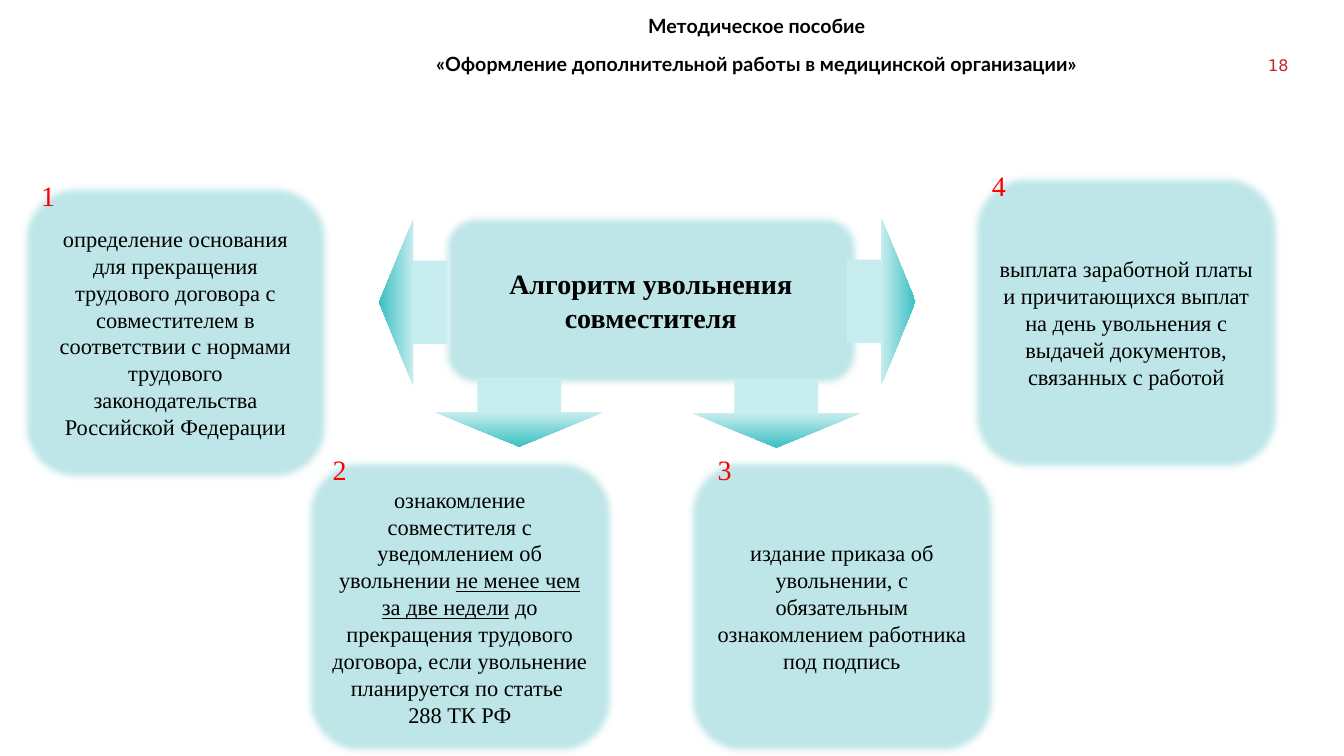
import lxml.etree
import pptx
import pptx.dml.color
import pptx.enum.shapes
import pptx.enum.text
import pptx.oxml.ns
import pptx.util

Inches = pptx.util.Inches
SHAPES = pptx.enum.shapes.MSO_SHAPE
ALIGN = pptx.enum.text.PP_ALIGN
ANCHOR = pptx.enum.text.MSO_ANCHOR

SERIF = "Times New Roman"
BOX_FILL = "BEE6E8"
ARROW_STOPS = ((0.5, "C7EDEE"), (1, "3BC0C3"))
STEP_WIDTH, STEP_HEIGHT = 3.08, 2.96
ARROW_WIDTH, ARROW_HEIGHT = 1.66, 0.68

# Left, top, number offset, number width, paragraphs of (text, underlined) runs
STEPS = [
    (0.2, 1.82, 0.11, 0.42, [[(
        "определение основания для прекращения трудового договора с "
        "совместителем в соответствии с нормами трудового "
        "законодательства Российской Федерации", False)]]),
    (3.02, 4.54, 0.18, 0.29, [
        [("ознакомление совместителя с уведомлением об увольнении ", False),
         ("не менее чем за две недели", True),
         (" до прекращения трудового договора, если увольнение "
          "планируется по статье ", False)],
        [("288 ТК РФ", False)]]),
    (6.81, 4.54, 0.21, 0.29, [[(
        "издание приказа об увольнении, с обязательным ознакомлением "
        "работника под подпись", False)]]),
    (9.63, 1.72, 0.11, 0.29, [[(
        "выплата заработной платы и причитающихся выплат на день "
        "увольнения с выдачей документов, связанных с работой", False)]]),
]

# Left, top, rotation
ARROWS = [(7.91, 2.65, 270), (3.27, 2.66, 90), (6.87, 3.76, 0), (4.32, 3.75, 0)]


def color(value):
    return pptx.dml.color.RGBColor.from_string(value)


def write(frame, paragraphs, *, size, font=SERIF, fill="000000", bold=False,
          align=ALIGN.CENTER, anchor=ANCHOR.TOP, inset=None, after=0, spacing=1.0):
    frame.word_wrap = True
    frame.auto_size = pptx.enum.text.MSO_AUTO_SIZE.NONE
    frame.vertical_anchor = anchor
    if inset is not None:
        frame.margin_left = frame.margin_right = Inches(inset)
        frame.margin_top = frame.margin_bottom = Inches(inset)
    for index, runs in enumerate(paragraphs):
        paragraph = frame.paragraphs[0] if index == 0 else frame.add_paragraph()
        paragraph.alignment = align
        paragraph.space_after = pptx.util.Pt(after)
        paragraph.line_spacing = spacing
        for text, underlined in runs:
            run = paragraph.add_run()
            run.text = text
            run.font.name = font
            run.font.size = pptx.util.Pt(size)
            run.font.bold = bold
            run.font.underline = underlined
            run.font.color.rgb = color(fill)


def add_label(slide, left, top, width, height, text, **style):
    label = slide.shapes.add_textbox(
        Inches(left), Inches(top), Inches(width), Inches(height))
    write(label.text_frame, [[(text, False)]], **style)


def add_header(slide, left, top, width, height):
    title = slide.shapes.title
    title.left, title.top = Inches(left), Inches(top)
    title.width, title.height = Inches(width), Inches(height)
    lines = ["Методическое пособие",
             "«Оформление дополнительной работы в медицинской организации»"]
    write(title.text_frame, [[(line, False)] for line in lines],
          size=14, font="Lato", bold=True, after=10)
    # Page number to the right of the title
    add_label(slide, left + 9.38, top + 0.46, 0.31, 0.24, "18", size=11.4,
              font="DejaVu Sans", fill="CA2324", align=ALIGN.RIGHT, inset=0)


def add_soft_box(slide, left, top, width, height, paragraphs, **style):
    box = slide.shapes.add_shape(
        SHAPES.ROUNDED_RECTANGLE,
        Inches(left), Inches(top), Inches(width), Inches(height))
    box.shadow.inherit = False
    box.fill.solid()
    box.fill.fore_color.rgb = color(BOX_FILL)
    box.line.fill.background()
    # Soft edge goes into the effect list
    effects = box._element.spPr.find(pptx.oxml.ns.qn("a:effectLst"))
    lxml.etree.SubElement(effects, pptx.oxml.ns.qn("a:softEdge"), rad="63500")
    write(box.text_frame, paragraphs, anchor=ANCHOR.MIDDLE, **style)


def add_step_number(slide, left, top, width, number):
    add_label(slide, left, top, width, 0.44, str(number), size=20,
              fill="FF0000", align=ALIGN.LEFT, after=8, spacing=1.07)


def add_arrow(slide, left, top, rotation):
    arrow = slide.shapes.add_shape(
        SHAPES.DOWN_ARROW, Inches(left), Inches(top),
        Inches(ARROW_WIDTH), Inches(ARROW_HEIGHT))
    arrow.rotation = rotation
    arrow.shadow.inherit = False
    arrow.line.fill.background()
    arrow.fill.gradient()
    arrow.fill.gradient_angle = 270
    for stop, (position, value) in zip(arrow.fill.gradient_stops, ARROW_STOPS):
        stop.position = position
        stop.color.rgb = color(value)


def main():
    deck = pptx.Presentation()
    deck.slide_width, deck.slide_height = Inches(13.33), Inches(7.5)
    slide = deck.slides.add_slide(deck.slide_layouts[5])

    add_header(slide, 3.09, 0.09, 8.83, 0.71)

    # Central topic and the four steps around it
    add_soft_box(slide, 4.38, 2.12, 4.15, 1.72,
                 [[("Алгоритм увольнения совместителя", False)]],
                 size=20, bold=True)
    for left, top, _, _, paragraphs in STEPS:
        add_soft_box(slide, left, top, STEP_WIDTH, STEP_HEIGHT, paragraphs, size=16)

    # Arrows and step numbers lie over the boxes
    for left, top, rotation in ARROWS:
        add_arrow(slide, left, top, rotation)
    for number, (left, top, offset, width, _) in enumerate(STEPS, 1):
        add_step_number(slide, left + offset, top - 0.12, width, number)

    deck.save("out.pptx")


if __name__ == "__main__":
    main()
